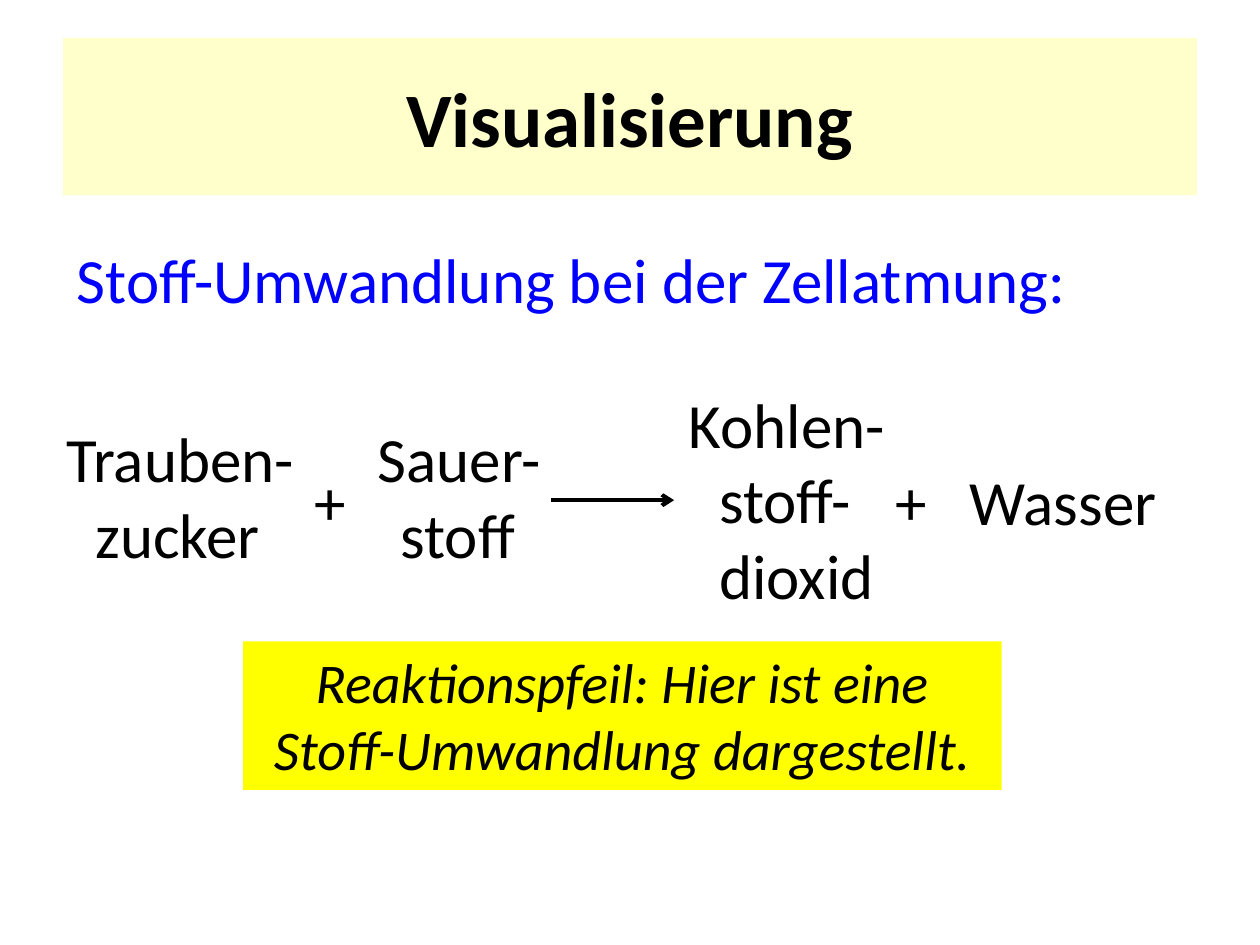
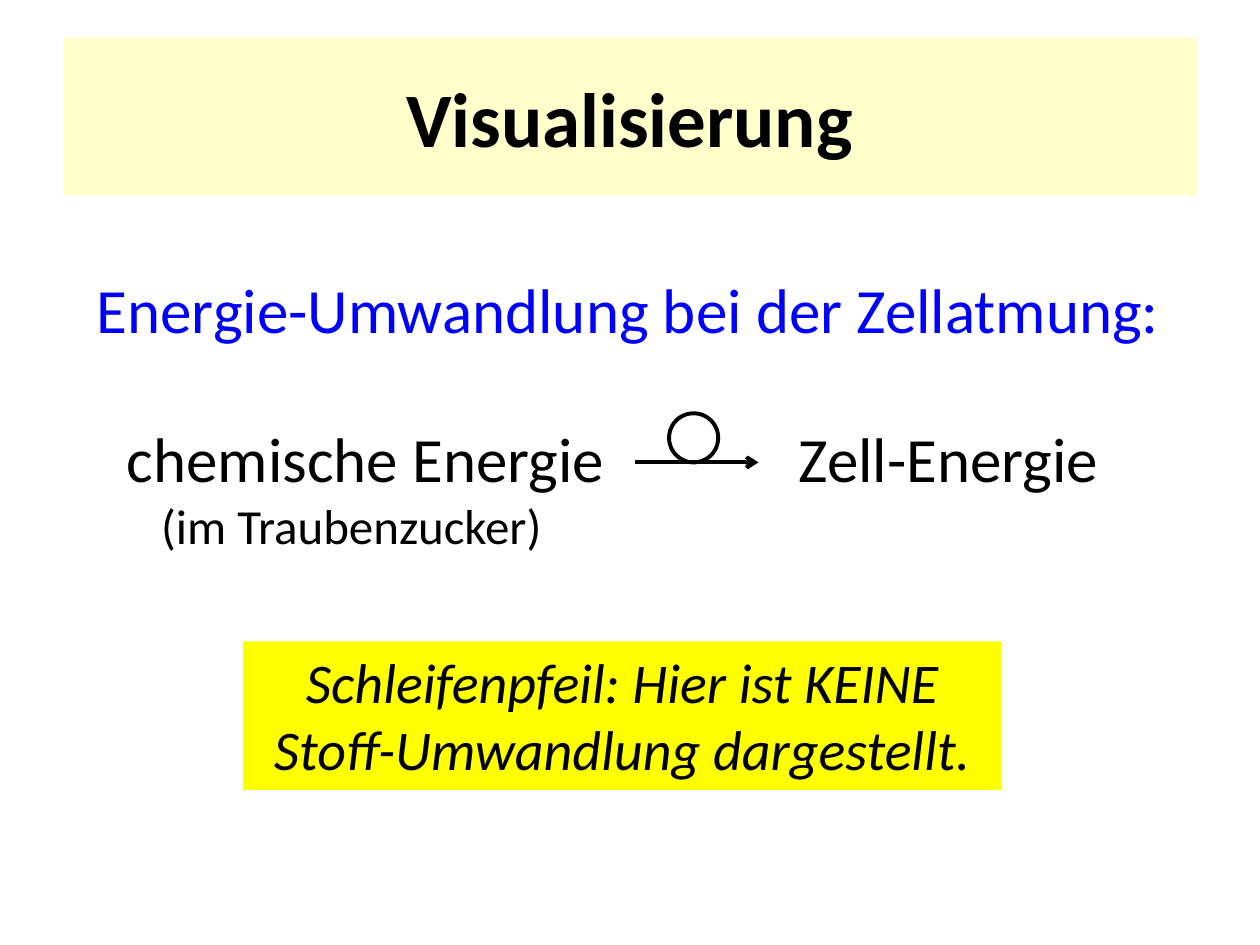
import pptx
import pptx.util
import pptx.dml.color
import pptx.enum.shapes
import pptx.enum.text
import pptx.oxml
import pptx.oxml.ns
import lxml.etree

Inches = pptx.util.Inches
FONT = "Calibri"
BLACK, BLUE, CREAM, YELLOW = "000000", "0000FF", "FFFFCC", "FFFF00"
TITLE_BOX = (0.5, 0.3, 9, 1.25)
NOTE_BOX = (1.93, 5.09, 6.02, 1.18)
TERM_SIZE = 36
LINE_HEIGHT = 0.61
PADDING = 0.1
LINE_WIDTH = 2.25


def color(hex_code):
    """Turn a hex string into a colour."""
    return pptx.dml.color.RGBColor.from_string(hex_code)


def fill_solid(shape, hex_code):
    """Fill a shape with one colour."""
    shape.fill.solid()
    shape.fill.fore_color.rgb = color(hex_code)


def stroke(line):
    """Give a line the shared width and colour."""
    line.color.rgb = color(BLACK)
    line.width = pptx.util.Pt(LINE_WIDTH)


def write(para, text, size=TERM_SIZE, hex_code=BLACK, bold=False, italic=False):
    """Add one formatted run to a paragraph."""
    span = para.add_run()
    span.text = text
    span.font.name = FONT
    span.font.size = pptx.util.Pt(size)
    span.font.bold = bold
    span.font.italic = italic
    span.font.color.rgb = color(hex_code)


def add_title(page, text):
    """Place the title placeholder as a cream band."""
    title = page.shapes.title
    title.left, title.top, title.width, title.height = map(Inches, TITLE_BOX)
    fill_solid(title, CREAM)
    frame = title.text_frame
    frame.vertical_anchor = pptx.enum.text.MSO_ANCHOR.MIDDLE
    para = frame.paragraphs[0]
    para.alignment = pptx.enum.text.PP_ALIGN.CENTER
    write(para, text, 44, bold=True)


def add_text(page, left, top, width, lines, hex_code=BLACK):
    """Place lines given as (text, indent, size) in a text box."""
    height = len(lines) * LINE_HEIGHT + PADDING
    box = page.shapes.add_textbox(*map(Inches, (left, top, width, height)))
    frame = box.text_frame
    frame.word_wrap = True
    for number, (text, indent, size) in enumerate(lines):
        para = frame.add_paragraph() if number else frame.paragraphs[0]
        if indent:
            para._p.get_or_add_pPr().set("marL", str(Inches(indent)))
        write(para, text, size, hex_code)


def add_note(page, text):
    """Place the yellow explanation near the bottom."""
    note = page.shapes.add_shape(
        pptx.enum.shapes.MSO_SHAPE.RECTANGLE, *map(Inches, NOTE_BOX))
    note.shadow.inherit = False
    fill_solid(note, YELLOW)
    note.line.fill.background()
    frame = note.text_frame
    frame.word_wrap = True
    frame.vertical_anchor = pptx.enum.text.MSO_ANCHOR.TOP
    para = frame.paragraphs[0]
    para.alignment = pptx.enum.text.PP_ALIGN.CENTER
    write(para, text, 32, italic=True)


def add_arrow(page, left, top, length=0.98):
    """Draw a horizontal reaction arrow."""
    arrow = page.shapes.add_connector(
        pptx.enum.shapes.MSO_CONNECTOR.STRAIGHT,
        *map(Inches, (left, top, left + length, top)))
    stroke(arrow.line)
    tail = lxml.etree.SubElement(
        arrow.line._get_or_add_ln(), pptx.oxml.ns.qn("a:tailEnd"))
    tail.set("type", "arrow")
    lxml.etree.SubElement(
        arrow._element.spPr, pptx.oxml.ns.qn("a:effectLst"))


def add_loop_arrow(page, left, top, diameter=0.39):
    """Draw an arrow with a circle resting on it."""
    add_arrow(page, left, top)
    loop = page.shapes.add_shape(
        pptx.enum.shapes.MSO_SHAPE.OVAL,
        *map(Inches, (left + 0.27, top - diameter, diameter, diameter)))
    loop.shadow.inherit = False
    loop.fill.background()
    stroke(loop.line)


def start_page(deck, heading, left, top, width, note):
    """Add a page with title, blue heading and note."""
    page = deck.slides.add_slide(deck.slide_layouts[5])
    add_title(page, "Visualisierung")
    add_text(page, left, top, width, [(heading, 0, TERM_SIZE)], BLUE)
    add_note(page, note)
    return page


def build_substance_page(deck):
    """Show the word equation of cell respiration."""
    page = start_page(deck, "Stoff-Umwandlung bei der Zellatmung:", 0.51, 1.86, 8.98,
                      "Reaktionspfeil: Hier ist eine Stoff-Umwandlung dargestellt.")
    middle = 3.97
    terms = [
        (0.43, 2.1, 3.28, [("Trauben-", 0), ("zucker", 0.23)]),
        (2.4, 0.6, 3.62, [("+", 0)]),
        (2.9, 1.6, 3.28, [("Sauer-", 0), ("stoff", 0.18)]),
        (5.37, 1.9, 3.01, [("Kohlen-", 0), ("stoff-", 0.24), ("dioxid", 0.24)]),
        (7.01, 0.6, 3.62, [("+", 0)]),
        (7.6, 1.9, 3.62, [("Wasser", 0)]),
    ]
    for left, width, top, lines in terms:
        add_text(page, left, top, width,
                 [(text, indent, TERM_SIZE) for text, indent in lines])
    add_arrow(page, 4.37, middle)


def build_energy_page(deck):
    """Show the energy conversion of cell respiration."""
    page = start_page(deck, "Energie-Umwandlung bei der Zellatmung:", 0.67, 2.1, 8.74,
                      "Schleifenpfeil: Hier ist KEINE Stoff-Umwandlung dargestellt.")
    top = 3.28
    add_text(page, 0.91, top, 4.1, [("chemische Energie", 0, TERM_SIZE),
                                    ("(im Traubenzucker)", 0.27, 28)])
    add_text(page, 6.24, top, 2.7, [("Zell-Energie", 0, TERM_SIZE)])
    add_loop_arrow(page, 5.04, 3.67)


def main():
    """Build and save the deck."""
    deck = pptx.Presentation()
    deck.slide_width, deck.slide_height = Inches(10), Inches(7.5)
    build_substance_page(deck)
    build_energy_page(deck)
    deck.save("out.pptx")


if __name__ == "__main__":
    main()
